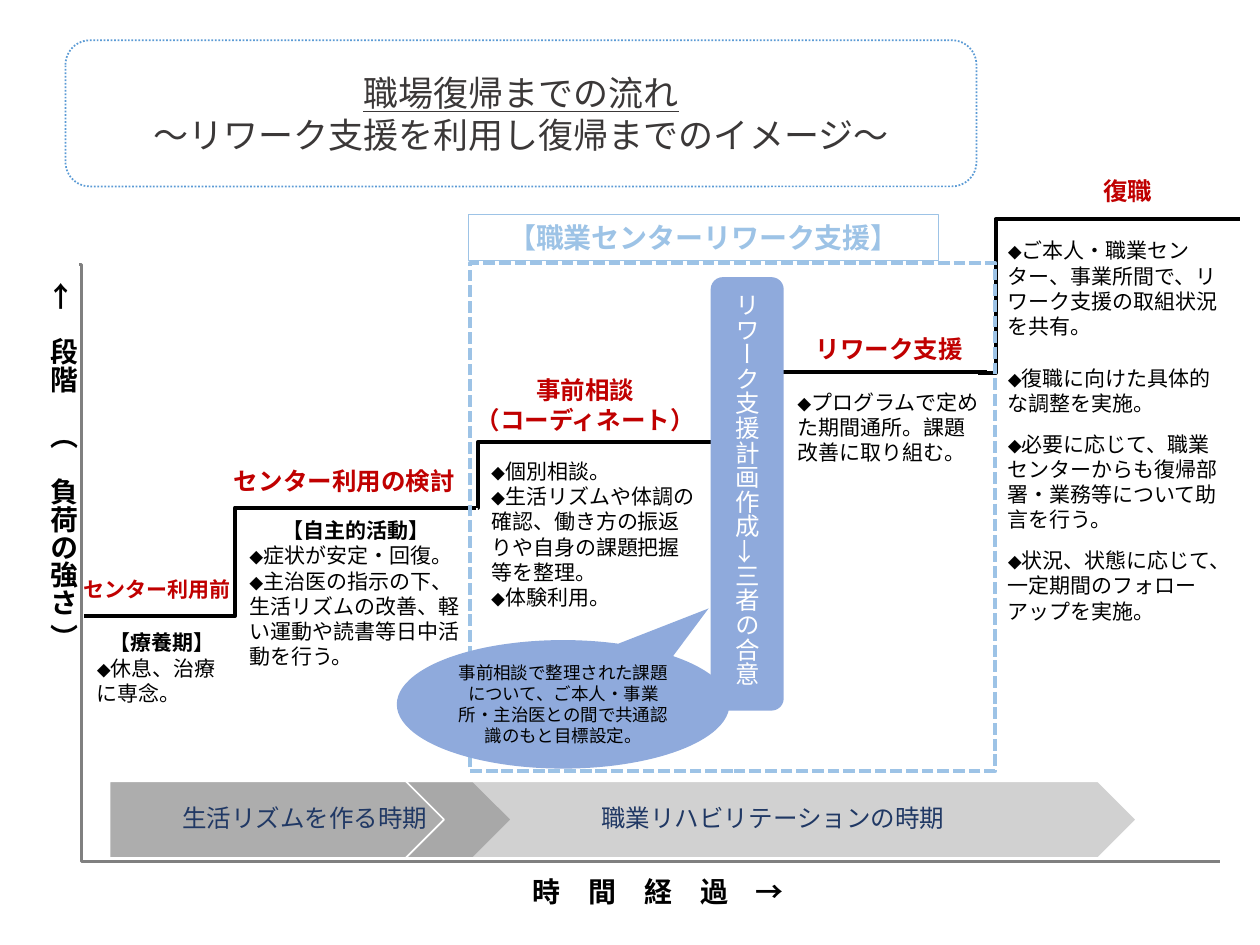
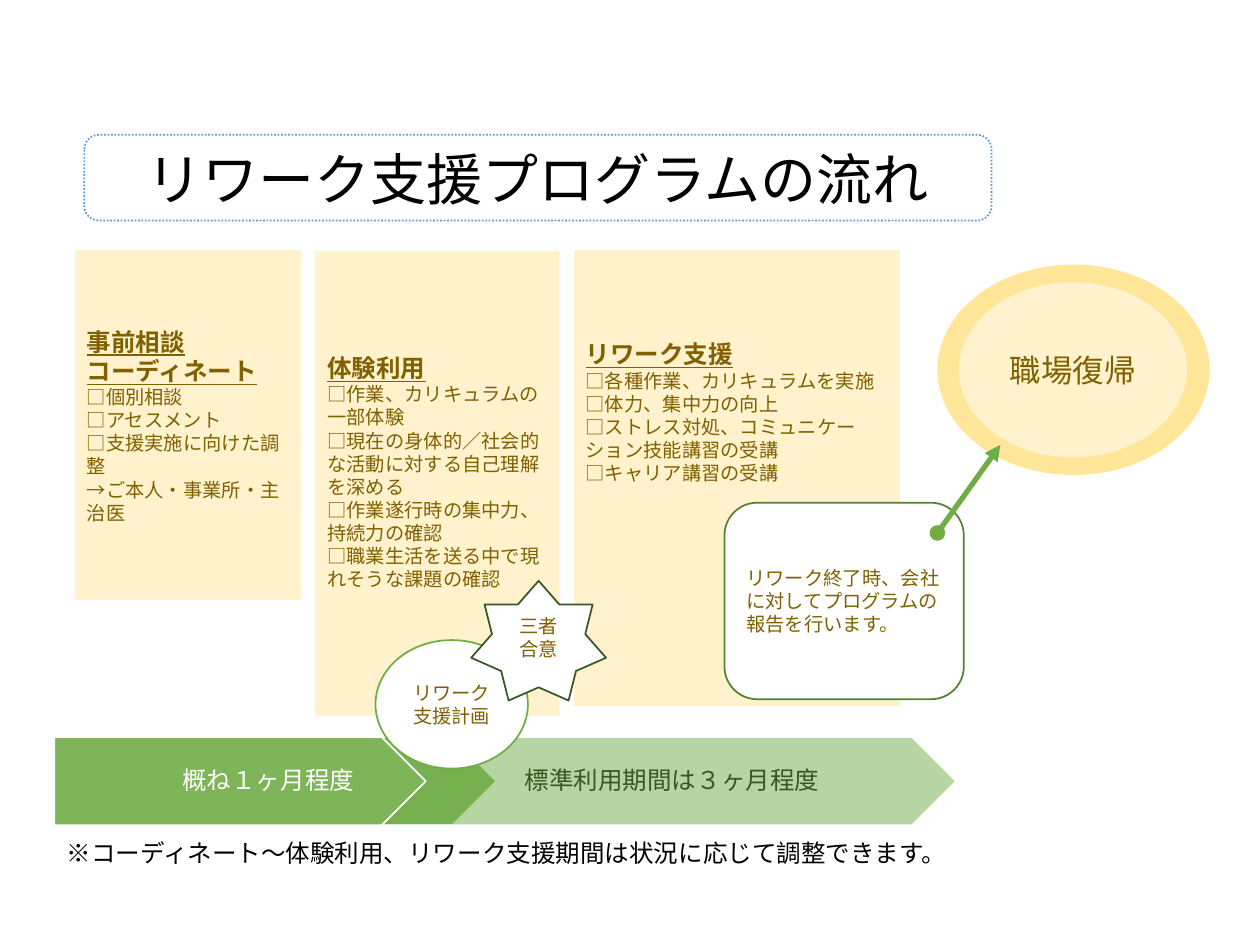
from lxml import etree
from pptx import Presentation
from pptx.dml.color import RGBColor
from pptx.enum.dml import MSO_LINE
from pptx.enum.shapes import MSO_CONNECTOR, MSO_SHAPE
from pptx.enum.text import MSO_ANCHOR, PP_ALIGN
from pptx.oxml.ns import qn
from pptx.util import Inches, Pt

RECTANGLE = MSO_SHAPE.RECTANGLE
ROUNDED = MSO_SHAPE.ROUNDED_RECTANGLE
OVAL = MSO_SHAPE.OVAL
PENTAGON = MSO_SHAPE.PENTAGON
CHEVRON = MSO_SHAPE.CHEVRON
STAR = MSO_SHAPE.STAR_7_POINT
CALLOUT = MSO_SHAPE.OVAL_CALLOUT
ELBOW = MSO_CONNECTOR.ELBOW
STRAIGHT = MSO_CONNECTOR.STRAIGHT
DOTTED = MSO_LINE.ROUND_DOT
DASHED = MSO_LINE.SQUARE_DOT
LEFT, CENTER = PP_ALIGN.LEFT, PP_ALIGN.CENTER
TOP, MIDDLE = MSO_ANCHOR.TOP, MSO_ANCHOR.MIDDLE

FONT = "Noto Sans CJK JP"
BAND_FONT = "Calibri"
COLORS = {
    "white": "FFFFFF", "black": "000000", "axis": "808080", "red": "C00000",
    "sky": "9DC3E6", "periwinkle": "8FAADC", "title_line": "5B9BD5",
    "charcoal": "3B3838", "gray": "A5A5A5", "navy": "203864",
    "green": "70AD47", "mid_green": "548235", "dark_green": "385723",
    "cream": "FFF2CC", "gold": "FFE699", "brown": "806000",
}
CARD_HEADING = {"size": Pt(14), "bold": True, "underline": True}


def rgb(color):
    return RGBColor.from_string(COLORS[color])


class Deck:
    def __init__(self):
        self.presentation = Presentation()
        self.presentation.slide_width = Inches(10)
        self.presentation.slide_height = Inches(7.5)
        self.slide = None

    def new_slide(self):
        layout = self.presentation.slide_layouts[6]
        self.slide = self.presentation.slides.add_slide(layout)

    def outline(self, line, color, width=1, dash=None):
        line.color.rgb = rgb(color)
        line.width = Pt(width)
        if dash:
            line.dash_style = dash

    def shape(self, kind, box, fill=None, line=None, opacity=None):
        shape = self.slide.shapes.add_shape(kind, *map(Inches, box))
        shape.shadow.inherit = False
        if fill:
            shape.fill.solid()
            shape.fill.fore_color.rgb = rgb(fill)
        else:
            shape.fill.background()
        if opacity:
            color = shape._element.spPr.find(qn("a:solidFill")).find(qn("a:srgbClr"))
            etree.SubElement(color, qn("a:alpha"), val=str(opacity * 1000))
        if line:
            self.outline(shape.line, *line)
        else:
            shape.line.fill.background()
        return shape

    def text_box(self, box, lines, **style):
        shape = self.slide.shapes.add_textbox(*map(Inches, box))
        self.set_text(shape, lines, **style)

    def set_text(self, shape, lines, size=12, color="black", align=LEFT, anchor=TOP,
                 bold=False, font=FONT, vertical=False, spacing=None, margins=None, gaps=()):
        frame = shape.text_frame
        frame.word_wrap = True
        frame.vertical_anchor = anchor
        for side, value in (margins or {}).items():
            setattr(frame, f"margin_{side}", Inches(value))
        if vertical:
            shape._element.txBody.find(qn("a:bodyPr")).set("vert", "eaVert")
        for index, line in enumerate(lines):
            paragraph = frame.paragraphs[0] if index == 0 else frame.add_paragraph()
            text, changes = line if isinstance(line, tuple) else (line, {})
            format_values = {"size": Pt(size), "bold": bold, "name": font, **changes}
            paragraph.alignment = format_values.pop("align", align)
            if spacing:
                paragraph.line_spacing = spacing
            if index < len(gaps):
                paragraph.space_before = Pt(gaps[index])
            if text.startswith("◆"):
                self.run(paragraph, "◆", color, {**format_values, "size": Pt(8)})
                text = text[1:]
            self.run(paragraph, text, color, format_values)

    def run(self, paragraph, text, color, format_values):
        run = paragraph.add_run()
        run.text = text
        run.font.color.rgb = rgb(color)
        for name, value in format_values.items():
            setattr(run.font, name, value)
        east_asian = etree.Element(qn("a:ea"), typeface=FONT)
        run._r.find(qn("a:rPr")).find(qn("a:latin")).addnext(east_asian)

    def connector(self, kind, start, end, color, width, bend=None):
        connector = self.slide.shapes.add_connector(kind, *map(Inches, start + end))
        self.outline(connector.line, color, width)
        properties = connector._element.spPr
        etree.SubElement(properties, qn("a:effectLst"))
        if bend is not None:
            guides = properties.find(qn("a:prstGeom")).get_or_add_avLst()
            etree.SubElement(guides, qn("a:gd"), name="adj1", fmla=f"val {round(bend * 100000)}")
        return connector

    def arrow(self, start, end, color, width):
        connector = self.connector(STRAIGHT, start, end, color, width)
        line = connector._element.spPr.find(qn("a:ln"))
        for tag, kind in (("a:headEnd", "oval"), ("a:tailEnd", "triangle")):
            etree.SubElement(line, qn(tag), type=kind)

    def title(self, box, lines, size, color):
        shape = self.shape(ROUNDED, box, "white", ("title_line", 1, DOTTED))
        self.set_text(shape, lines, size, color, CENTER, MIDDLE)

    def note(self, box, lines, gaps=()):
        shape = self.shape(RECTANGLE, box, "white")
        self.set_text(shape, lines, gaps=gaps)

    def card(self, box, headings, items, bottom, line=None):
        shape = self.shape(RECTANGLE, box, "cream", line)
        lines = [(heading, CARD_HEADING) for heading in headings] + items
        self.set_text(shape, lines, 11, "brown", anchor=MIDDLE, margins={"bottom": bottom})

    def phase_band(self, top, height, fill, font, phases):
        kinds = ((PENTAGON, 90, 0.08), (CHEVRON, 50, 0.06))
        for (kind, opacity, left), phase in zip(kinds, phases):
            (x, width), (text_x, text_width), text, color = phase
            self.shape(kind, (x, top, width, height), fill, ("white",), opacity)
            margins = {"left": left, "top": 0.04, "right": 0.02, "bottom": 0.04}
            self.text_box((text_x, top, text_width, height), [text], size=14, color=color,
                          align=CENTER, anchor=MIDDLE, font=font, spacing=0.9, margins=margins)


def build_return_steps(deck):
    deck.new_slide()
    deck.connector(ELBOW, (0.63, 2.1), (9.68, 6.84), "axis", 1.5, 0.002)

    centered = {"bold": True, "align": CENTER}
    notes = [
        ((0.67, 4.95, 1.23, 0.93), [("【療養期】", centered), "◆休息、治療に専念。"], ()),
        ((1.88, 4.06, 1.89, 1.34),
         [("【自主的活動】", centered), "◆症状が安定・回復。",
          "◆主治医の指示の下、生活リズムの改善、軽い運動や読書等日中活動を行う。"], ()),
        ((3.8, 3.59, 1.83, 1.55),
         ["◆個別相談。",
          "◆生活リズムや体調の確認、働き方の振返りや自身の課題把握等を整理。",
          "◆体験利用。"], ()),
        ((6.23, 3.04, 1.66, 0.71),
         ["◆プログラムで定めた期間通所。課題改善に取り組む。"], ()),
        ((7.9, 1.84, 1.91, 3.2),
         ["◆ご本人・職業センター、事業所間で、リワーク支援の取組状況を共有。",
          "◆復職に向けた具体的な調整を実施。",
          "◆必要に応じて、職業センターからも復帰部署・業務等について助言を行う。",
          "◆状況、状態に応じて、一定期間のフォローアップを実施。"], (0, 15, 9, 9)),
    ]
    for box, lines, gaps in notes:
        deck.note(box, lines, gaps)

    deck.text_box((0.2, 2.14, 0.47, 3.19), ["←　段階　（　負荷の強さ ）"],
                  size=16, bold=True, vertical=True)
    deck.text_box((4.13, 6.89, 2.68, 0.37), ["時　間　経　過　→"], size=16, bold=True)

    steps = [
        ((0.67, 4.89), (3.78, 4.03), 0.384),
        ((5.84, 3.51), (3.79, 4.03), 0.999),
        ((5.85, 3.51), (7.83, 2.95), -0.011),
        ((7.76, 2.96), (9.84, 1.74), 0.068),
    ]
    for start, end, bend in steps:
        deck.connector(ELBOW, start, end, "black", 2.25, bend)

    step_names = [
        ((0.5, 4.53, 1.5, 0.3), ["センター利用前"], 12),
        ((1.75, 3.65, 1.97, 0.57), ["センター利用の検討"], 14),
        ((3.66, 2.93, 1.97, 0.57), ["事前相談", "（コーディネート）"], 14),
        ((6.26, 2.6, 1.6, 0.34), ["リワーク支援"], 14),
        ((8.25, 1.35, 1.4, 0.34), ["復職"], 14),
    ]
    for box, lines, size in step_names:
        deck.text_box(box, lines, size=size, color="red", align=CENTER, bold=True)

    deck.shape(RECTANGLE, (3.73, 2.09, 4.17, 4.03), line=("sky", 2.25, DASHED))
    center_label = deck.shape(RECTANGLE, (3.72, 1.7, 3.73, 0.37), line=("sky", 0.75))
    deck.set_text(center_label, ["【職業センターリワーク支援】"], 16, "sky", CENTER, bold=True)
    deck.title((0.52, 0.32, 7.23, 1.16),
               [("職場復帰までの流れ", {"underline": True}),
                "～リワーク支援を利用し復帰までのイメージ～"], 20, "charcoal")

    deck.phase_band(6.2, 0.61, "gray", FONT, [
        ((0.87, 3.19), (0.87, 3.04), "生活リズムを作る時期", "navy"),
        ((3.22, 5.8), (3.52, 5.19), "職業リハビリテーションの時期", "navy"),
    ])

    plan = deck.shape(ROUNDED, (5.64, 2.2, 0.58, 3.44), "periwinkle")
    deck.set_text(plan, ["リワーク支援計画作成→三者の合意"], 14, "white", CENTER, MIDDLE,
                  vertical=True)
    goal = deck.shape(CALLOUT, (3.15, 5.08, 2.64, 1.02), "periwinkle")
    goal.adjustments[0], goal.adjustments[1] = 0.437, -0.746
    deck.set_text(goal, ["事前相談で整理された課題について、ご本人・事業所・主治医との間で"
                         "共通認識のもと目標設定。"], 10, "black", CENTER, MIDDLE)


def build_program_flow(deck):
    deck.new_slide()
    deck.shape(OVAL, (7.44, 2.1, 2.16, 1.67), "gold")
    deck.card((4.55, 1.98, 2.6, 3.63), ["リワーク支援"],
              ["□各種作業、カリキュラムを実施", "□体力、集中力の向上",
               "□ストレス対処、コミュニケーション技能講習の受講",
               "□キャリア講習の受講"], 1.1, ("white",))
    workplace = deck.shape(OVAL, (7.61, 2.24, 1.81, 1.39), "cream")
    deck.set_text(workplace, ["職場復帰"], 18, "brown", CENTER, MIDDLE)
    deck.card((0.59, 1.98, 1.81, 2.79), ["事前相談", "コーディネート"],
              ["□個別相談", "□アセスメント", "□支援実施に向けた調整",
               "→ご本人・事業所・主治医"], 0.05, ("white",))
    deck.card((2.5, 1.99, 1.94, 3.69), ["体験利用"],
              ["□作業、カリキュラムの一部体験",
               "□現在の身体的／社会的な活動に対する自己理解を深める",
               "□作業遂行時の集中力、持続力の確認",
               "□職業生活を送る中で現れそうな課題の確認"], 0.23)

    deck.phase_band(5.85, 0.7, "green", BAND_FONT, [
        ((0.43, 3.51), (0.43, 3.34), "概ね１ヶ月程度", "white"),
        ((3.03, 4.56), (3.38, 3.87), "標準利用期間は３ヶ月程度", "dark_green"),
    ])

    report = deck.shape(ROUNDED, (5.75, 3.99, 1.9, 1.56), "white", ("mid_green",))
    deck.set_text(report, ["リワーク終了時、会社に対してプログラムの報告を行います。"],
                  11, "brown", anchor=MIDDLE)
    deck.arrow((7.44, 4.23), (7.94, 3.53), "green", 3)

    badges = [
        (OVAL, (2.98, 5.08, 1.21, 1.02), "green", ["リワーク", "支援計画"]),
        (STAR, (3.74, 4.61, 1.07, 0.95), "dark_green", ["三者合意"]),
    ]
    for kind, box, line, lines in badges:
        badge = deck.shape(kind, box, "white", (line,))
        deck.set_text(badge, lines, 11, "brown", CENTER, MIDDLE)

    deck.text_box((0.43, 6.6, 8.32, 0.34),
                  ["※コーディネート～体験利用、リワーク支援期間は状況に応じて調整できます。"], size=14)
    deck.title((0.67, 1.07, 7.2, 0.68), ["リワーク支援プログラムの流れ"], 32, "black")


def main():
    deck = Deck()
    build_return_steps(deck)
    build_program_flow(deck)
    deck.presentation.save("out.pptx")


if __name__ == "__main__":
    main()
